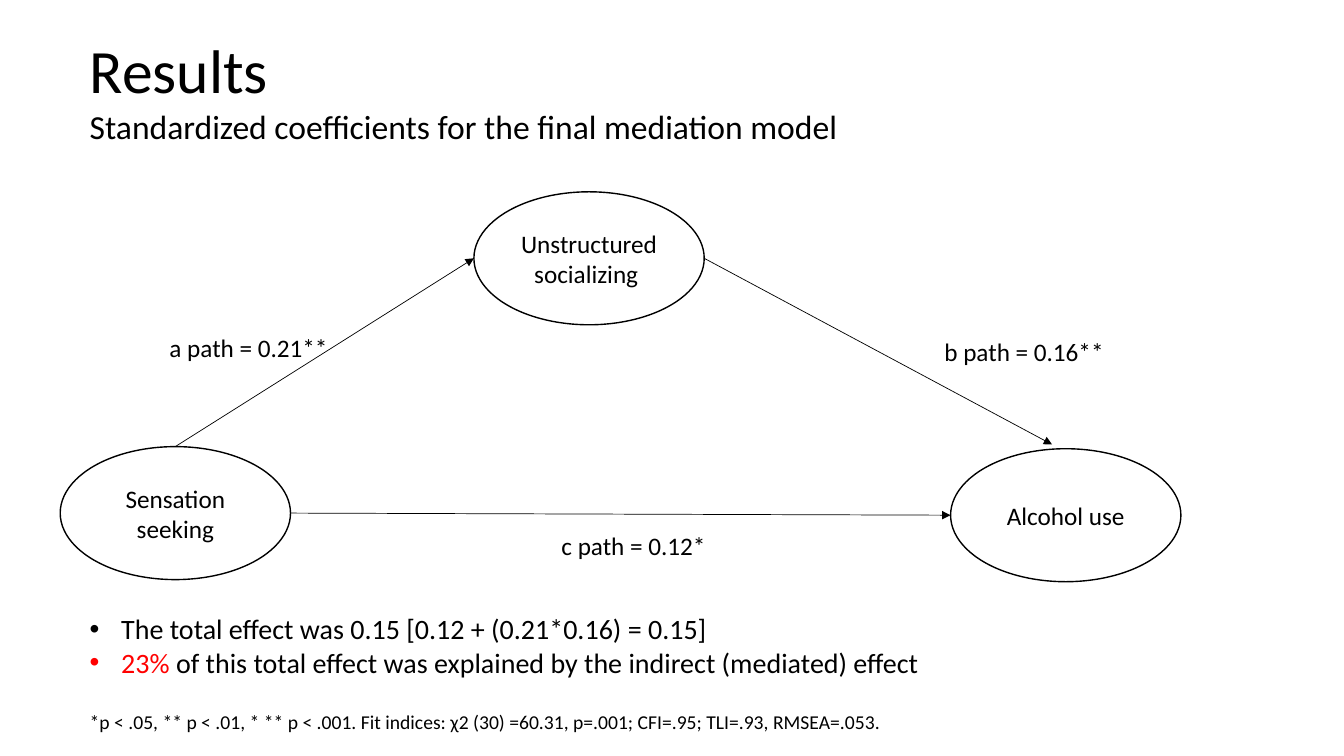
from dataclasses import dataclass

from lxml.etree import SubElement
from pptx import Presentation
from pptx.dml.color import RGBColor as RGB
from pptx.enum.shapes import MSO_CONNECTOR as CONN, MSO_SHAPE as SHAPE
from pptx.enum.text import MSO_ANCHOR as ANCHOR, MSO_AUTO_SIZE as FIT, PP_ALIGN as ALIGN
from pptx.oxml.ns import qn
from pptx.util import Pt


@dataclass(frozen=True)
class Theme:
    font: str = "Calibri"
    ink: RGB = RGB(0, 0, 0)
    accent: RGB = RGB(255, 0, 0)
    title: int = 44
    subtitle: int = 24
    bullet: int = 20
    label: int = 18
    note: int = 14
    outline: float = 1
    arrow: float = 0.5


class Deck:
    def __init__(self, theme):
        self.t = theme
        self.prs = Presentation()
        self.prs.slide_width, self.prs.slide_height = Pt(960), Pt(540)
        self.s = self.prs.slides.add_slide(self.prs.slide_layouts[6])

    def run(self, p, text, size, color=None):
        r = p.add_run()
        r.text = text
        r.font.name = self.t.font
        r.font.size = Pt(size)
        r.font.color.rgb = color or self.t.ink

    def oval(self, x, y, text):
        sp = self.s.shapes.add_shape(SHAPE.OVAL, Pt(x), Pt(y), Pt(164.5), Pt(95))
        sp.shadow.inherit = False
        sp.fill.background()
        sp.line.color.rgb = self.t.ink
        sp.line.width = Pt(self.t.outline)
        tf = sp.text_frame
        tf.word_wrap = True
        tf.vertical_anchor = ANCHOR.MIDDLE
        p = tf.paragraphs[0]
        p.alignment = ALIGN.CENTER
        self.run(p, text, self.t.label)
        return sp

    def top(self, sp):
        return sp.left + sp.width // 2, sp.top

    def left(self, sp):
        return sp.left, sp.top + sp.height // 2

    def right(self, sp):
        return sp.left + sp.width, sp.top + sp.height // 2

    def arrow(self, start, end):
        c = self.s.shapes.add_connector(CONN.STRAIGHT, *start, *end)
        c.line.color.rgb = self.t.ink
        c.line.width = Pt(self.t.arrow)
        SubElement(c.line._get_or_add_ln(), qn("a:tailEnd"), type="triangle")
        SubElement(c._element.spPr, qn("a:effectLst"))

    def text(self, x, y, w, h, paragraphs):
        sp = self.s.shapes.add_textbox(Pt(x), Pt(y), Pt(w), Pt(h))
        tf = sp.text_frame
        tf.word_wrap = True
        tf.auto_size = FIT.SHAPE_TO_FIT_TEXT
        for i, (size, runs) in enumerate(paragraphs):
            p = tf.add_paragraph() if i else tf.paragraphs[0]
            for text, color in runs:
                self.run(p, text, size, color)
        return tf

    def label(self, x, y, w, text):
        self.text(x, y, w, 29, [(self.t.label, [(text, self.t.ink)])])

    def bullet(self, p):
        pPr = p._p.get_or_add_pPr()
        pPr.set("marL", str(Pt(22.5)))
        pPr.set("indent", str(-Pt(22.5)))
        SubElement(pPr, qn("a:buFont"), typeface="Arial")
        SubElement(pPr, qn("a:buChar"), char="•")


def main():
    t = Theme()
    d = Deck(t)

    social = d.oval(338.5, 137, "Unstructured socializing ")
    sensation = d.oval(43, 319, "Sensation seeking")
    alcohol = d.oval(679, 320.5, "Alcohol use")

    d.arrow(d.top(sensation), d.left(social))
    d.arrow(d.right(social), (Pt(751.5), Pt(317.5)))
    d.arrow(d.right(sensation), d.left(alcohol))

    d.text(57, 19, 883, 90, [
        (t.title, [("Results", t.ink)]),
        (t.subtitle, [("Standardized coefficients for the final mediation model", t.ink)]),
    ])

    d.label(114, 233.5, 135.5, "a path = 0.21**")
    d.label(667.5, 237, 138, "b path = 0.16**")
    d.label(394, 375.5, 125, "c path = 0.12*")

    tf = d.text(57, 433.5, 883, 94, [
        (t.bullet, [("The total effect was 0.15 [0.12 + (0.21*0.16) = 0.15]", t.ink)]),
        (t.bullet, [("23% ", t.accent),
                    ("of this total effect was explained by the indirect (mediated) effect", t.ink)]),
        (t.note, [("*p < .05, ** p < .01, * ** p < .001. Fit indices: χ2 (30) =60.31, "
                   "p=.001; CFI=.95; TLI=.93, RMSEA=.053.", t.ink)]),
    ])
    effects, note = tf.paragraphs[:2], tf.paragraphs[2]
    for p in effects:
        d.bullet(p)
    note.space_before = Pt(22)

    d.prs.save("out.pptx")


if __name__ == "__main__":
    main()
